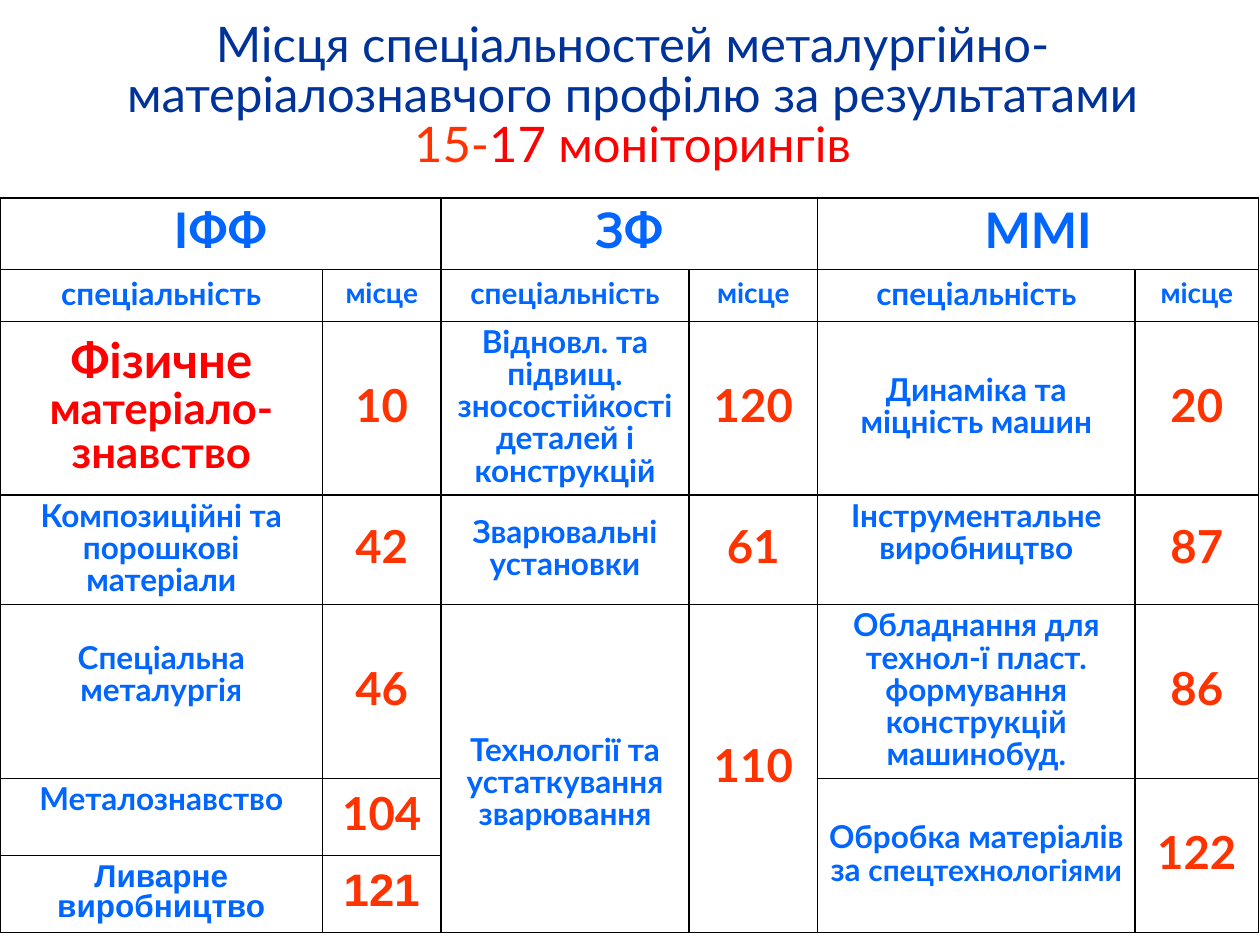
from dataclasses import dataclass

from lxml.etree import SubElement
from pptx import Presentation
from pptx.dml.color import RGBColor
from pptx.enum.text import MSO_ANCHOR, MSO_AUTO_SIZE, PP_ALIGN
from pptx.oxml.ns import qn
from pptx.util import Inches, Pt

NAVY = RGBColor(0x00, 0x33, 0x99)
BLUE = RGBColor(0x00, 0x66, 0xFF)
ORANGE = RGBColor(0xFF, 0x33, 0x00)
RED = RGBColor(0xFF, 0x00, 0x00)
WHITE = RGBColor(0xFF, 0xFF, 0xFF)
BLACK = RGBColor(0x00, 0x00, 0x00)

FONT = "Lato"
LINE_SPACING = 0.85
MARGIN = 0.05
TEXT_LINE = 0.25  # height of one 18 pt line, shifts some labels off centre

COLUMN_WIDTHS = (2.56, 0.94, 1.97, 1.02, 2.52, 0.98)
ROW_HEIGHTS = (0.57, 0.41, 1.38, 0.87, 1.38, 0.61, 0.61)


@dataclass(frozen=True)
class Run:
    text: str
    size: float = 18
    color: RGBColor = BLUE
    font: str = FONT
    bold: bool = True


@dataclass(frozen=True)
class Entry:
    """Table cell: place, paragraphs of runs, span and extra margins."""
    row: int
    column: int
    paragraphs: tuple[tuple[Run, ...], ...]
    row_span: int = 1
    column_span: int = 1
    extra_top: float = 0
    extra_bottom: float = 0


def label(row: int, column: int, *lines: str, size: float = 18,
          font: str = FONT, **layout) -> Entry:
    paragraphs = tuple((Run(line, size, font=font),) for line in lines)
    return Entry(row, column, paragraphs, **layout)


def place(row: int, column: int, number: int, font: str = FONT,
          row_span: int = 1) -> Entry:
    return Entry(row, column, ((Run(str(number), 26, ORANGE, font),),), row_span)


TITLE = (
    (Run("Місця спеціальностей металургійно-матеріалознавчого профілю "
         "за результатами", 28, NAVY, bold=False),),
    (Run("15-", 28, ORANGE, bold=False),
     Run("17 моніторингів", 28, RED, bold=False)),
)

# Faculty names and column headings
HEADINGS = [
    entry
    for column, faculty, size in ((0, "ІФФ", 18), (2, "ЗФ", 17), (4, "ММІ", 18))
    for entry in (
        label(0, column, faculty, size=28, column_span=2),
        label(1, column, "спеціальність", size=size),
        label(1, column + 1, "місце", size=16),
    )
]

# Specialities with their places
RESULTS = [
    Entry(2, 0, ((Run("Фізичне ", 28, RED), Run("матеріало-знавство", 25, RED)),)),
    place(2, 1, 10),
    label(2, 2, "Відновл. та підвищ. зносостійкості деталей і конструкцій"),
    place(2, 3, 120),
    label(2, 4, "Динаміка та міцність машин"),
    place(2, 5, 20),
    label(3, 0, "Композиційні та порошкові", "матеріали"),
    place(3, 1, 42),
    label(3, 2, "Зварювальні", "установки"),
    place(3, 3, 61),
    label(3, 4, "Інструментальне виробництво", extra_bottom=TEXT_LINE),
    place(3, 5, 87),
    label(4, 0, "Спеціальна металургія", extra_bottom=TEXT_LINE),
    place(4, 1, 46),
    label(4, 2, "Технології та устаткування зварювання", row_span=3,
          extra_top=TEXT_LINE),
    place(4, 3, 110, row_span=3),
    label(4, 4, "Обладнання для технол-ї пласт. формування конструкцій машинобуд."),
    place(4, 5, 86),
    label(5, 0, "Металознавство", extra_bottom=TEXT_LINE),
    place(5, 1, 104),
    Entry(5, 4, ((Run("Обробка матеріалів за "), Run("спецтехнологіями", 17)),),
          row_span=2),
    place(5, 5, 122, row_span=2),
    label(6, 0, "Ливарне виробництво", font="Arial"),
    place(6, 1, 121, font="Arial"),
]


def write_paragraphs(text_frame, paragraphs: tuple[tuple[Run, ...], ...]) -> None:
    for index, runs in enumerate(paragraphs):
        paragraph = text_frame.add_paragraph() if index else text_frame.paragraphs[0]
        paragraph.alignment = PP_ALIGN.CENTER
        paragraph.line_spacing = LINE_SPACING
        paragraph.space_before = Pt(0)
        for item in runs:
            run = paragraph.add_run()
            run.text = item.text
            run.font.name = item.font
            run.font.size = Pt(item.size)
            run.font.bold = item.bold
            run.font.color.rgb = item.color


def style_cell(cell) -> None:
    properties = cell._tc.get_or_add_tcPr()
    for side in ("a:lnL", "a:lnR", "a:lnT", "a:lnB"):
        line = SubElement(properties, qn(side), w=str(Pt(1)))
        fill = SubElement(line, qn("a:solidFill"))
        SubElement(fill, qn("a:srgbClr"), val=str(BLACK))
    cell.fill.solid()
    cell.fill.fore_color.rgb = WHITE


def fill_entry(table, entry: Entry) -> None:
    cell = table.cell(entry.row, entry.column)
    if entry.row_span > 1 or entry.column_span > 1:
        cell.merge(table.cell(entry.row + entry.row_span - 1,
                              entry.column + entry.column_span - 1))
    cell.vertical_anchor = MSO_ANCHOR.MIDDLE
    cell.margin_left = cell.margin_right = Inches(0.09)
    cell.margin_top = Inches(MARGIN + entry.extra_top)
    cell.margin_bottom = Inches(MARGIN + entry.extra_bottom)
    write_paragraphs(cell.text_frame, entry.paragraphs)


def add_title(slide) -> None:
    title = slide.shapes.title
    title.left, title.top = Inches(0), Inches(0.13)
    title.width, title.height = Inches(10.04), Inches(1.29)
    text_frame = title.text_frame
    text_frame.word_wrap = True
    text_frame.auto_size = MSO_AUTO_SIZE.NONE
    text_frame.vertical_anchor = MSO_ANCHOR.TOP
    write_paragraphs(text_frame, TITLE)


def add_results_table(slide) -> None:
    table = slide.shapes.add_table(
        len(ROW_HEIGHTS), len(COLUMN_WIDTHS), Inches(0), Inches(1.57),
        Inches(sum(COLUMN_WIDTHS)), Inches(sum(ROW_HEIGHTS))).table
    table.first_row = table.horz_banding = False
    for column, width in zip(table.columns, COLUMN_WIDTHS):
        column.width = Inches(width)
    for row, height in zip(table.rows, ROW_HEIGHTS):
        row.height = Inches(height)
    for cell in table.iter_cells():
        style_cell(cell)
    for entry in HEADINGS + RESULTS:
        fill_entry(table, entry)


def main() -> None:
    presentation = Presentation()
    presentation.slide_width, presentation.slide_height = Inches(10), Inches(7.5)
    slide = presentation.slides.add_slide(presentation.slide_layouts[5])
    add_title(slide)
    add_results_table(slide)
    presentation.save("out.pptx")


if __name__ == "__main__":
    main()
